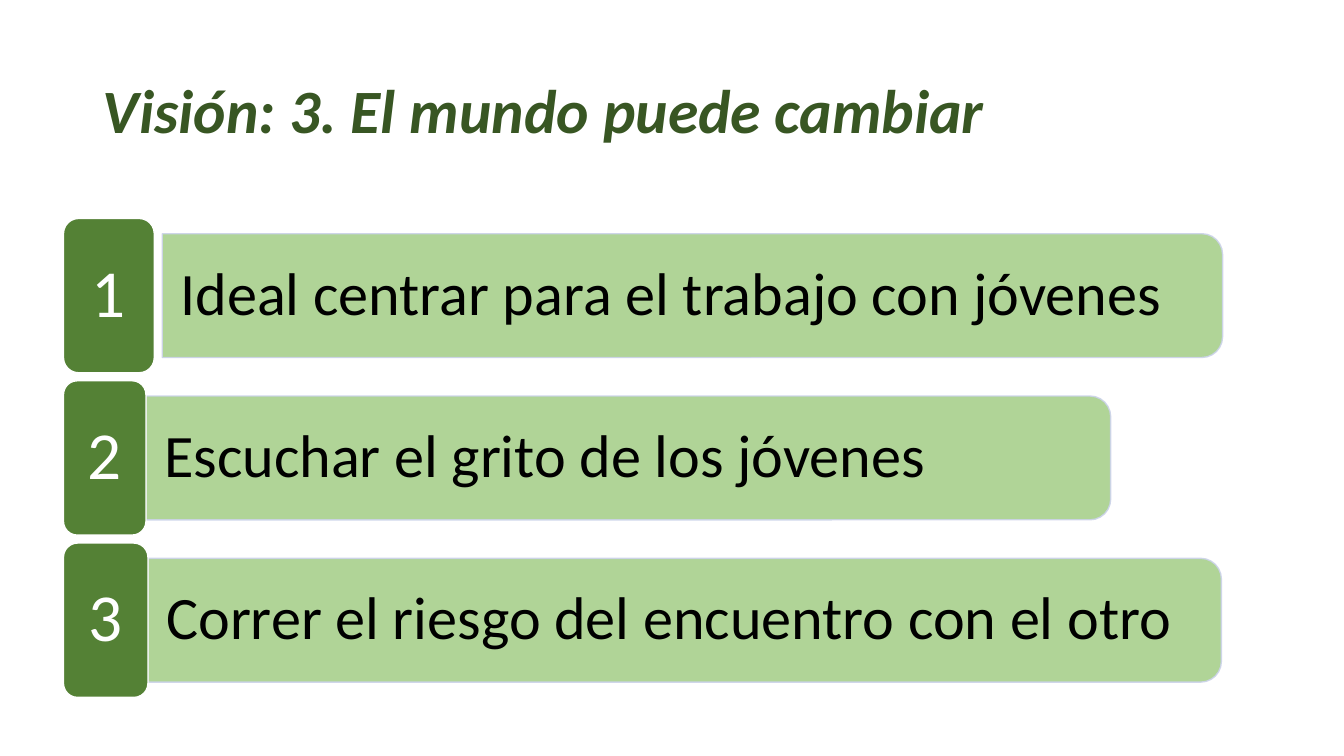
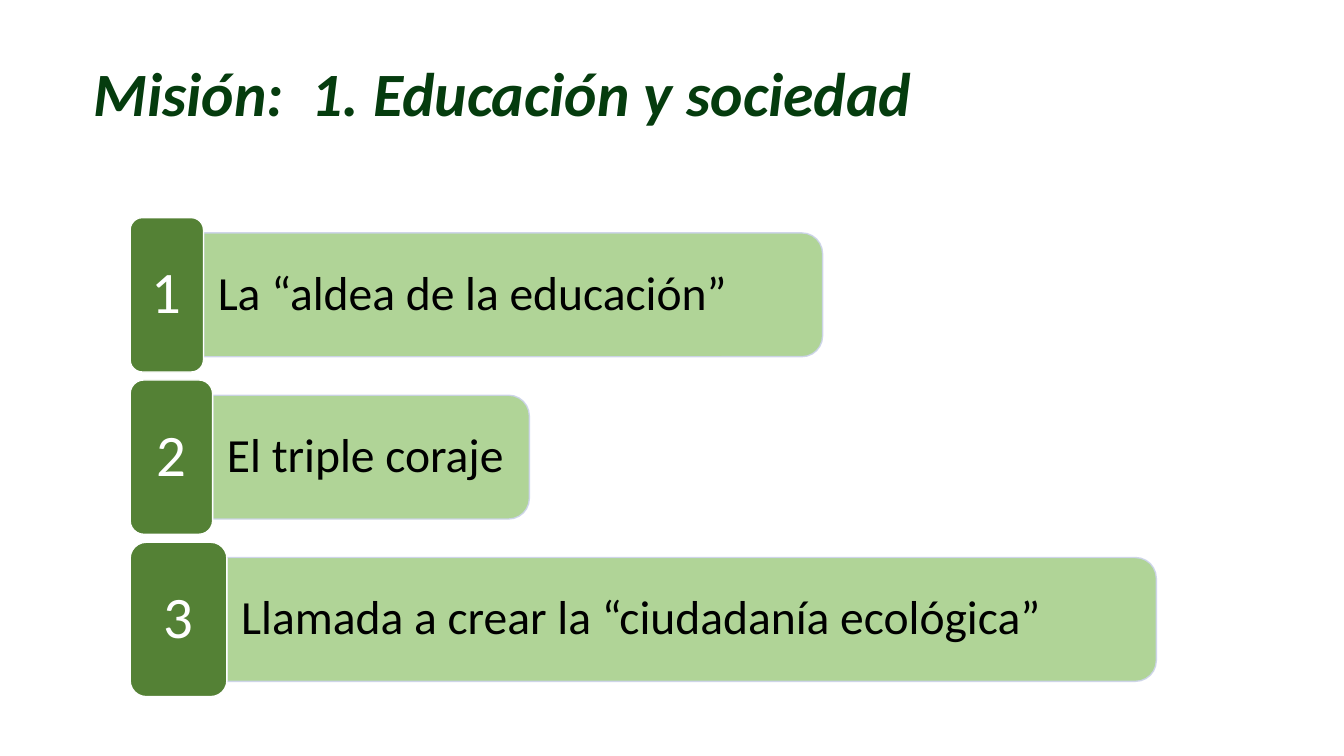
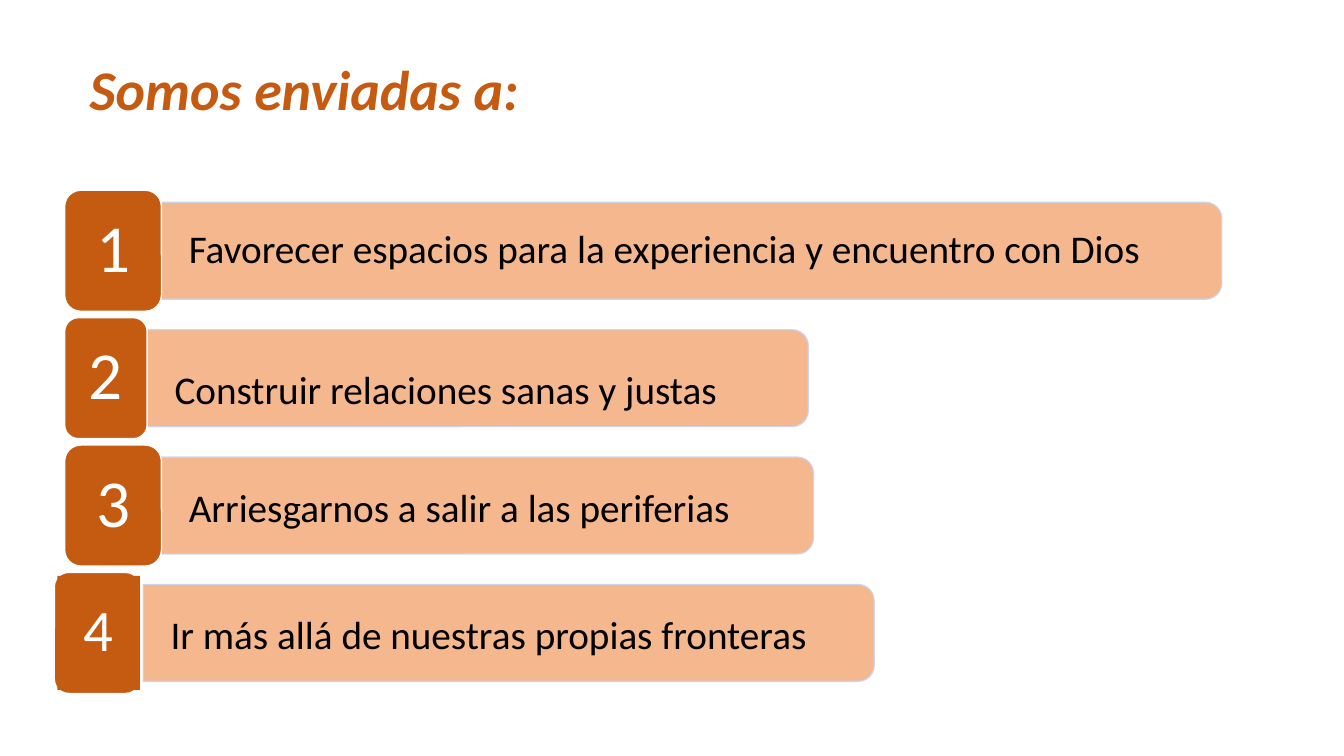
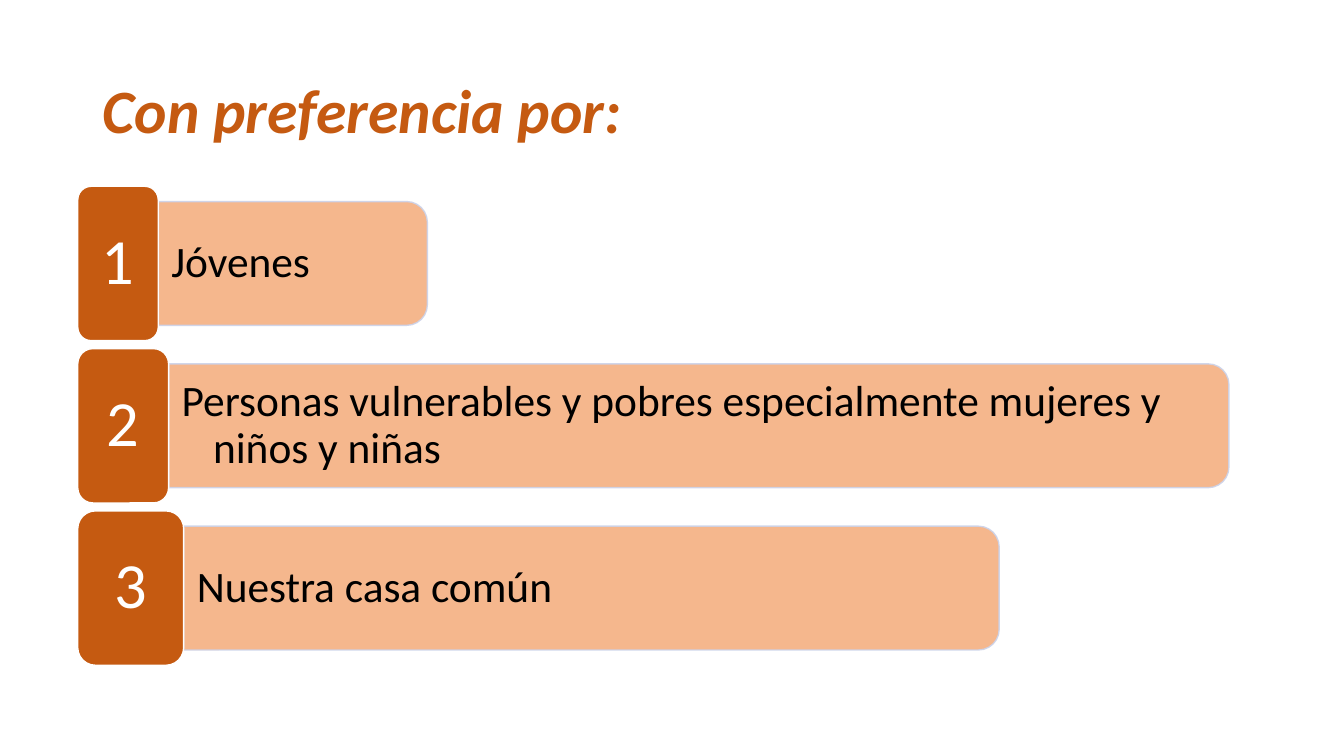
from dataclasses import dataclass

from lxml import etree
from pptx import Presentation
from pptx import util as u
from pptx.dml import color as dml
from pptx.enum import shapes, text
from pptx.oxml import ns

FONT = "Calibri"
WHITE, BLACK, BAR_EDGE = "FFFFFF", "000000", "CCD3EA"
GREEN, LIGHT_GREEN = "548135", "A8D08C"
ORANGE, LIGHT_ORANGE = "C55A11", "F4B081"
CORNER = 0.167
HANGING = 0.79
KIND = shapes.MSO_SHAPE


@dataclass
class Row:
    """One numbered bar; lengths in cm."""
    label: str
    badge_width: float
    bar_width: float
    gap: float = 0
    drop: float = 0
    shift: float = 0
    square: bool = False


@dataclass
class NumberedList:
    """What the rows of one slide share; lengths in cm, text sizes in points."""
    left: float
    first_middle: float
    label_size: int
    number_size: int
    inset: float
    dark: str = GREEN
    light: str = LIGHT_GREEN
    pitch: float = 4.09
    badge_height: float = 3.89
    bar_height: float = 3.12


def rgb(value):
    return dml.RGBColor.from_string(value)


def set_opacity(color_format_parent, percent):
    for color in color_format_parent.iter(ns.qn("a:srgbClr")):
        etree.SubElement(color, ns.qn("a:alpha"), val=str(percent * 1000))


def write(shape, content, size, color, inset=0.0, align=text.PP_ALIGN.LEFT):
    """Put one vertically centred paragraph into a shape and return it."""
    frame = shape.text_frame
    frame.word_wrap = True
    frame.vertical_anchor = text.MSO_ANCHOR.MIDDLE
    frame.margin_left = frame.margin_right = u.Cm(inset)
    frame.margin_top = frame.margin_bottom = 0
    paragraph = frame.paragraphs[0]
    paragraph.text = content
    paragraph.alignment = align
    paragraph.line_spacing = 0.9
    paragraph.font.name = FONT
    paragraph.font.size = u.Pt(size)
    paragraph.font.color.rgb = rgb(color)
    return paragraph


def add_text(slide, left, top, width, height, *args, **options):
    box = slide.shapes.add_textbox(u.Cm(left), u.Cm(top), u.Cm(width), u.Cm(height))
    return write(box, *args, **options)


def add_centred(slide, kind, center, middle, width, height, fill, edge=None):
    """Add a preset shape around its centre point."""
    shape = slide.shapes.add_shape(
        kind, u.Cm(center - width / 2), u.Cm(middle - height / 2), u.Cm(width), u.Cm(height))
    shape.shadow.inherit = False
    shape.fill.solid()
    shape.fill.fore_color.rgb = rgb(fill)
    if edge:
        shape.line.color.rgb = rgb(edge)
        shape.line.width = u.Pt(1)
    else:
        shape.line.fill.background()
    return shape


def add_title(slide, content, left, top, color, size=44):
    paragraph = add_text(slide, left, top, 29.21, 3.68, content, size, color, inset=0.25)
    paragraph.font.bold = paragraph.font.italic = True


def add_bar(slide, style, row, left, middle):
    """Add a bar rounded on its right side, with its label on top."""
    bar = add_centred(slide, KIND.ROUND_2_SAME_RECTANGLE, left + row.bar_width / 2, middle,
                      style.bar_height, row.bar_width, style.light, BAR_EDGE)
    bar.rotation = 90
    bar.adjustments[0] = CORNER
    set_opacity(bar.element.spPr, 90)
    label = add_text(slide, left, middle - style.bar_height / 2 + row.drop,
                     row.bar_width - 0.15, style.bar_height,
                     row.label, style.label_size, BLACK, inset=style.inset)
    properties = label._p.get_or_add_pPr()
    properties.set("marL", str(u.Cm(HANGING)))
    properties.set("indent", str(-u.Cm(HANGING)))


def add_badge(slide, style, row, number, left, middle):
    center = left + row.badge_width / 2
    badge = add_centred(slide, KIND.ROUNDED_RECTANGLE, center, middle,
                        row.badge_width, style.badge_height, style.dark, WHITE)
    badge.adjustments[0] = CORNER
    size = style.number_size
    if row.square:
        badge = add_centred(slide, KIND.RECTANGLE, center + 0.04, middle,
                            row.badge_width - 0.08, 2.87, style.dark)
        size = 42
    write(badge, str(number), size, WHITE, align=text.PP_ALIGN.CENTER)


def add_numbered_list(slide, style, rows):
    for index, row in enumerate(rows):
        left = style.left + row.shift
        middle = style.first_middle + index * style.pitch
        add_bar(slide, style, row, left + row.badge_width + row.gap, middle)
        add_badge(slide, style, row, index + 1, left, middle)


def main():
    presentation = Presentation()
    presentation.slide_width, presentation.slide_height = u.Cm(33.87), u.Cm(19.05)

    def new_slide():
        return presentation.slides.add_slide(presentation.slide_layouts[6])

    slide = new_slide()
    add_title(slide, "Visión: 3. El mundo puede cambiar", 2.34, 1.02, "385623")
    add_numbered_list(slide, NumberedList(1.6, 7.45, 43, 48, 0.46), [
        Row("Ideal centrar para el trabajo con jóvenes", 2.29, 26.72, gap=0.2),
        Row("Escuchar el grito de los jóvenes", 2.08, 24.31),
        Row("Correr el riesgo del encuentro con el otro", 2.13, 27.05),
    ])

    slide = new_slide()
    add_title(slide, "Misión:  1. Educación y sociedad", 2.11, 0.6, "053C0E")
    add_numbered_list(slide, NumberedList(3.28, 7.43, 34, 42, 0.36), [
        Row("La “aldea de la educación”", 1.85, 15.6),
        Row("El triple coraje", 2.08, 7.98),
        Row("Llamada a crear la “ciudadanía ecológica”", 2.44, 23.42),
    ])

    slide = new_slide()
    add_title(slide, "Somos enviadas a:", 2.01, 0.48, ORANGE, size=40)
    compact = NumberedList(1.63, 6.32, 28, 48, 0.69, ORANGE, LIGHT_ORANGE,
                           pitch=3.21, badge_height=3.05, bar_height=2.44)
    add_numbered_list(slide, compact, [
        Row("Favorecer espacios para la experiencia y encuentro con Dios", 2.44, 26.72),
        Row("Construir relaciones sanas y justas", 2.08, 16.66, drop=0.35),
        Row("Arriesgarnos a salir a las periferias", 2.44, 16.43, drop=0.1),
        Row("Ir más allá de nuestras propias fronteras", 2.16, 18.42,
            gap=0.08, drop=0.1, shift=-0.26, square=True),
    ])

    slide = new_slide()
    add_title(slide, "Con preferencia por:", 2.34, 1.02, ORANGE)
    add_numbered_list(slide, NumberedList(1.96, 6.64, 31, 46, 0.33, ORANGE, LIGHT_ORANGE), [
        Row("Jóvenes", 2.03, 6.78),
        Row("Personas vulnerables y pobres especialmente mujeres y niños y niñas", 2.29, 26.72),
        Row("Nuestra casa común", 2.67, 20.55),
    ])

    presentation.save("out.pptx")


if __name__ == "__main__":
    main()
